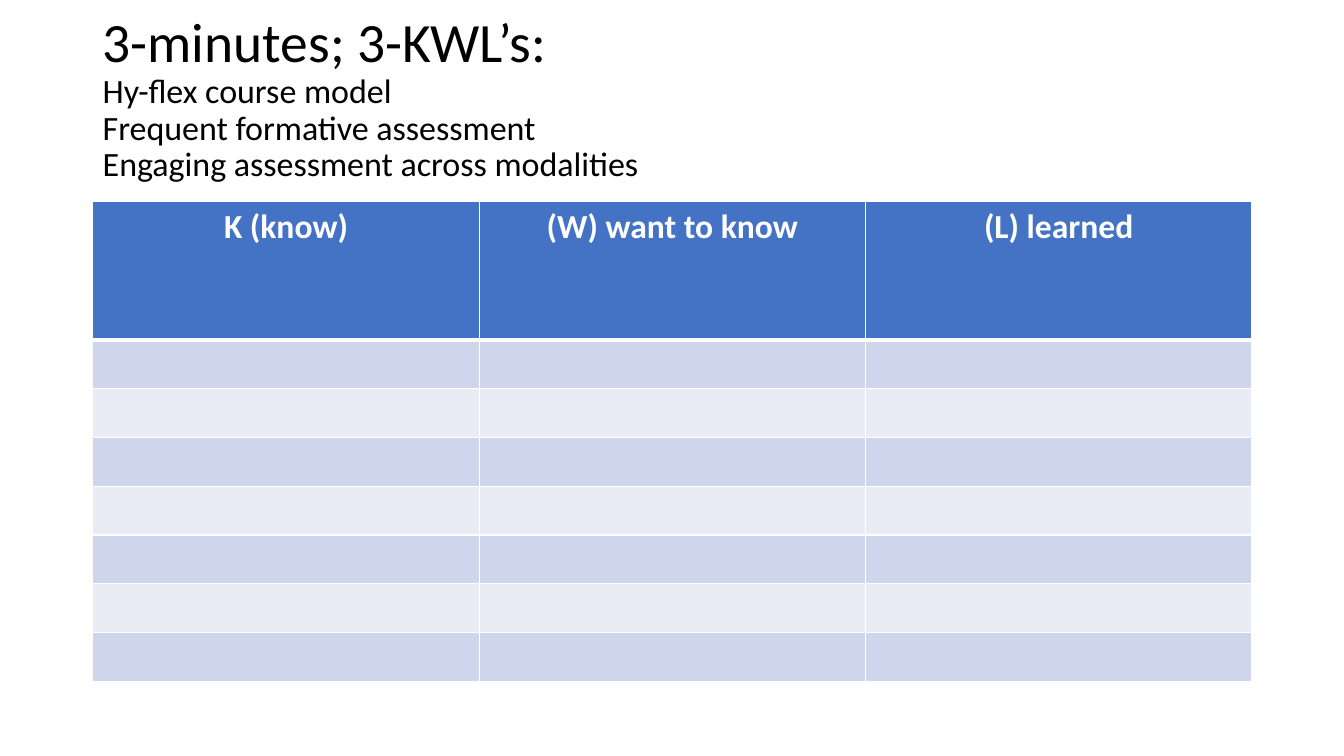
from lxml import etree
from pptx import Presentation
from pptx.dml.color import RGBColor
from pptx.enum.text import MSO_ANCHOR, PP_ALIGN
from pptx.oxml.ns import qn
from pptx.util import Cm, Pt

FONT = "Calibri"
COLORS = {
    "text": "000000",
    "white": "FFFFFF",
    "header": "4472C4",
    "odd_row": "CFD5EA",
    "even_row": "E9EBF5",
}
LEFT, WIDTH = Cm(2.34), Cm(29.21)
TITLE = "3-minutes; 3-KWL’s:"
TOPICS = [
    "Hy-flex course model",
    "Frequent formative assessment",
    "Engaging assessment across modalities",
]
HEADINGS = ["K (know)", "(W) want to know", "(L) learned"]
BODY_ROWS = 7


def write_text(paragraph, text, size, color="text", bold=False,
               align=PP_ALIGN.LEFT, line_spacing=1.0):
    paragraph.alignment = align
    paragraph.line_spacing = line_spacing
    run = paragraph.add_run()
    run.text = text
    run.font.name = FONT
    run.font.size = Pt(size)
    run.font.bold = bold
    run.font.color.rgb = RGBColor.from_string(COLORS[color])


def set_borders(cell, top, bottom):
    """Draw white cell borders; top and bottom are widths in points."""
    properties = cell._tc.get_or_add_tcPr()
    for side, width in (("L", 1), ("R", 1), ("T", top), ("B", bottom)):
        line = etree.SubElement(properties, qn(f"a:ln{side}"), w=str(Pt(width)))
        fill = etree.SubElement(line, qn("a:solidFill"))
        etree.SubElement(fill, qn("a:srgbClr"), val=COLORS["white"])


def fill_cell(cell, color):
    cell.fill.solid()
    cell.fill.fore_color.rgb = RGBColor.from_string(COLORS[color])


def add_title(slide):
    box = slide.shapes.add_textbox(LEFT, Cm(0.36), WIDTH, Cm(5.79))
    frame = box.text_frame
    frame.word_wrap = True
    frame.vertical_anchor = MSO_ANCHOR.TOP
    frame.margin_top = 0
    write_text(frame.paragraphs[0], TITLE, 39.6, line_spacing=0.9)
    for topic in TOPICS:
        write_text(frame.add_paragraph(), topic, 24.3, line_spacing=0.9)


def add_kwl_table(slide):
    header_height, row_height = Cm(3.48), Cm(1.23)
    table = slide.shapes.add_table(
        BODY_ROWS + 1, len(HEADINGS), LEFT, Cm(5.08), WIDTH,
        header_height + BODY_ROWS * row_height).table
    for row_index, row in enumerate(table.rows):
        is_header = row_index == 0
        row.height = header_height if is_header else row_height
        if is_header:
            color = "header"
        else:
            color = "odd_row" if row_index % 2 else "even_row"
        for cell in row.cells:
            set_borders(cell, top=3 if row_index == 1 else 1,
                        bottom=3 if is_header else 1)
            fill_cell(cell, color)
    for column, heading in enumerate(HEADINGS):
        write_text(table.cell(0, column).text_frame.paragraphs[0], heading, 24,
                   color="white", bold=True, align=PP_ALIGN.CENTER)


def main():
    presentation = Presentation()
    presentation.slide_width = Cm(33.87)
    presentation.slide_height = Cm(19.05)
    slide = presentation.slides.add_slide(presentation.slide_layouts[6])
    add_title(slide)
    add_kwl_table(slide)
    presentation.save("out.pptx")


if __name__ == "__main__":
    main()
